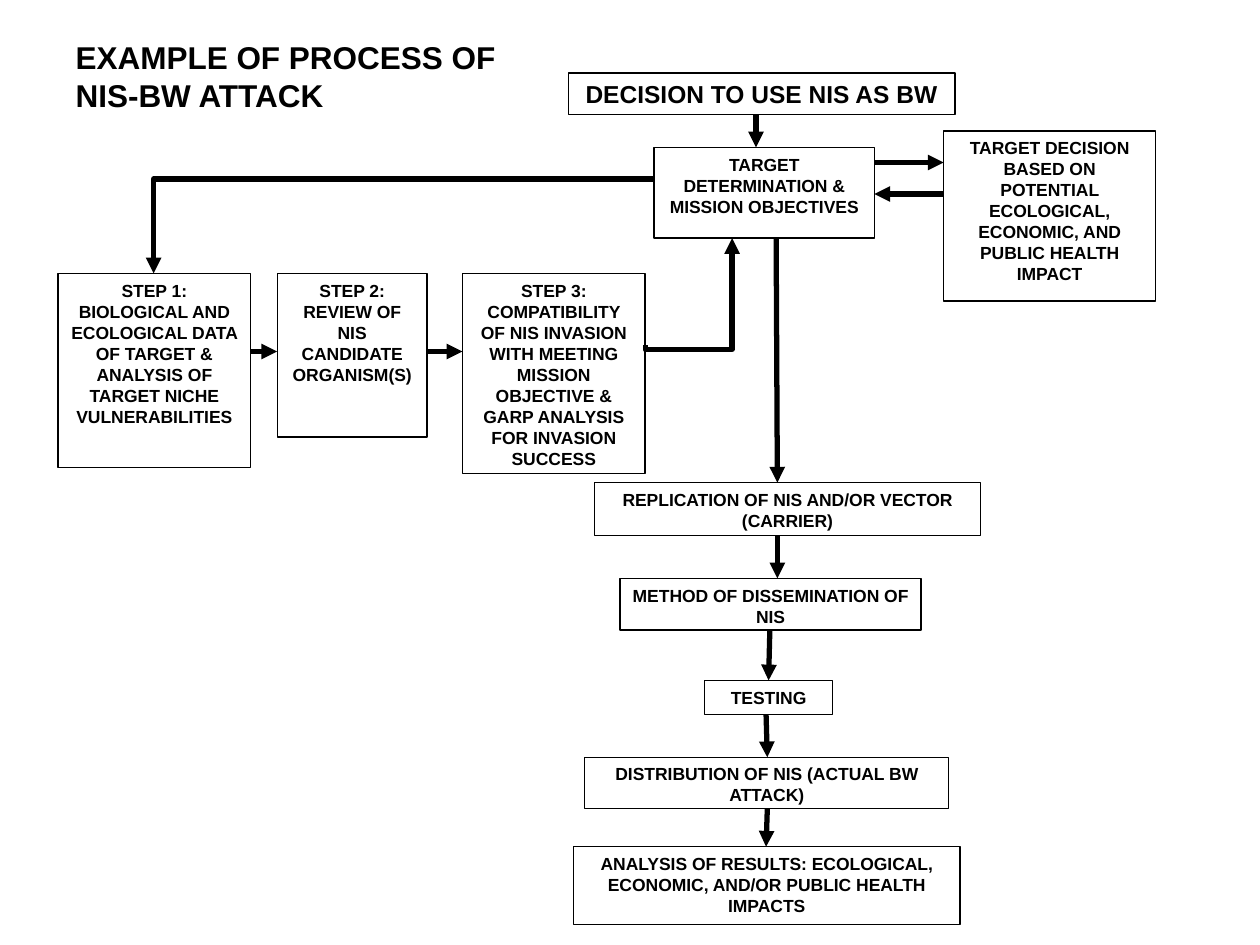
from lxml import etree
from pptx import Presentation
from pptx.dml.color import RGBColor
from pptx.enum.shapes import MSO_CONNECTOR, MSO_SHAPE
from pptx.enum.text import MSO_ANCHOR, MSO_AUTO_SIZE, PP_ALIGN
from pptx.oxml.ns import qn
from pptx.util import Inches, Pt

RECTANGLE = MSO_SHAPE.RECTANGLE
STRAIGHT, ELBOW = MSO_CONNECTOR.STRAIGHT, MSO_CONNECTOR.ELBOW
LEFT, CENTER = PP_ALIGN.LEFT, PP_ALIGN.CENTER
TOP, FIXED_SIZE = MSO_ANCHOR.TOP, MSO_AUTO_SIZE.NONE

COLORS = {"paper": "FFFFFF", "ink": "000000"}
COLUMNS, ROWS = 100, 75
TITLE_ONLY = 5

# name: (column, row, columns wide, rows high, text, text size)
BOXES = {
    "decision": (45.1, 5.8, 30.7, 3.3, "DECISION TO USE NIS AS BW", 14),
    "target": (51.9, 11.7, 17.5, 7.2, "TARGET DETERMINATION & MISSION OBJECTIVES", 10),
    "step 1": (4.6, 21.7, 15.3, 15.4, "STEP 1: BIOLOGICAL AND ECOLOGICAL DATA OF TARGET & "
               "ANALYSIS OF TARGET NICHE VULNERABILITIES", 10),
    "step 2": (22, 21.7, 11.9, 13, "STEP 2: REVIEW OF NIS CANDIDATE ORGANISM(S)", 10),
    "step 3": (36.7, 21.7, 14.5, 15.9, "STEP 3: COMPATIBILITY OF NIS INVASION WITH MEETING "
               "MISSION OBJECTIVE & GARP ANALYSIS FOR INVASION SUCCESS", 10),
    "replication": (47.2, 38.3, 30.6, 4.2, "REPLICATION OF NIS AND/OR VECTOR (CARRIER)", 10),
    "method": (49.2, 45.9, 23.9, 4.1, "METHOD OF DISSEMINATION OF NIS", 10),
    "testing": (55.9, 54, 10.2, 2.7, "TESTING", 10),
    "distribution": (46.4, 60.1, 28.9, 4.1, "DISTRIBUTION OF NIS (ACTUAL BW ATTACK)", 10),
    "impact": (74.9, 10.4, 16.8, 13.5, "TARGET DECISION BASED ON POTENTIAL ECOLOGICAL, "
               "ECONOMIC, AND PUBLIC HEALTH IMPACT", 10),
    "analysis": (45.5, 67.2, 30.7, 6.2, "ANALYSIS OF RESULTS: ECOLOGICAL, ECONOMIC, "
                 "AND/OR PUBLIC HEALTH IMPACTS", 10),
}

# (upper box, lower box, start column, end column)
DOWN_ARROWS = [
    ("decision", "target", 60, 60),
    ("target", "replication", 61.6, 61.7),
    ("replication", "method", 61.7, 61.7),
    ("method", "testing", 61.1, 61),
    ("testing", "distribution", 60.8, 60.9),
    ("distribution", "analysis", 60.9, 60.8),
]

# (from box, to box, row)
SIDE_ARROWS = [
    ("target", "impact", 12.9),
    ("impact", "target", 15.4),
    ("step 1", "step 2", 27.9),
    ("step 2", "step 3", 27.9),
]


class FlowChart:
    """Holds the style and the current slide."""

    font = {"name": "Arial", "bold": True}
    frame = {"word_wrap": True, "auto_size": FIXED_SIZE, "vertical_anchor": TOP}

    def __init__(self, presentation):
        self.width = presentation.slide_width
        self.height = presentation.slide_height
        self.slide = presentation.slides.add_slide(presentation.slide_layouts[TITLE_ONLY])

    def x(self, columns):
        return round(self.width * columns / COLUMNS)

    def y(self, rows):
        return round(self.height * rows / ROWS)

    def add_text(self, shape, text, size, alignment, space_after):
        for name, value in self.frame.items():
            setattr(shape.text_frame, name, value)
        paragraph = shape.text_frame.paragraphs[0]
        paragraph.alignment = alignment
        paragraph.space_after = Pt(space_after)
        run = paragraph.add_run()
        run.text = text
        for name, value in {**self.font, "size": Pt(size)}.items():
            setattr(run.font, name, value)
        run.font.color.rgb = RGBColor.from_string(COLORS["ink"])

    def title(self, column, row, wide, high, text):
        shape = self.slide.shapes.title
        place = {"left": self.x(column), "top": self.y(row),
                 "width": self.x(wide), "height": self.y(high)}
        for name, value in place.items():
            setattr(shape, name, value)
        self.add_text(shape, text, 18, LEFT, 0)

    def box(self, column, row, wide, high, text, size):
        shape = self.slide.shapes.add_shape(
            RECTANGLE, self.x(column), self.y(row), self.x(wide), self.y(high))
        shape.shadow.inherit = False
        shape.fill.solid()
        shape.fill.fore_color.rgb = RGBColor.from_string(COLORS["paper"])
        shape.line.color.rgb = RGBColor.from_string(COLORS["ink"])
        shape.line.width = Pt(0.75)
        self.add_text(shape, text, size, CENTER, 10)

    def arrow(self, begin, end, kind=STRAIGHT):
        connector = self.slide.shapes.add_connector(
            kind, self.x(begin[0]), self.y(begin[1]), self.x(end[0]), self.y(end[1]))
        connector.line.color.rgb = RGBColor.from_string(COLORS["ink"])
        connector.line.width = Pt(3)
        properties = connector._element.spPr
        etree.SubElement(properties.find(qn("a:ln")), qn("a:tailEnd"), type="triangle")
        etree.SubElement(properties, qn("a:effectLst"))
        return connector

    def elbow(self, begin, end, bend, upward=False):
        """Bend is the share of the way at which the line turns."""
        if upward:  # a quarter turn swaps the sides around the same centre
            middle_x, middle_y = (begin[0] + end[0]) / 2, (begin[1] + end[1]) / 2
            half_wide, half_high = abs(end[1] - begin[1]) / 2, abs(end[0] - begin[0]) / 2
            begin = (middle_x - half_wide, middle_y - half_high)
            end = (middle_x + half_wide, middle_y + half_high)
        properties = self.arrow(begin, end, ELBOW)._element.spPr
        if upward:
            properties.find(qn("a:xfrm")).set("rot", str(270 * 60000))
        guides = properties.find(qn("a:prstGeom")).get_or_add_avLst()
        etree.SubElement(guides, qn("a:gd"), name="adj1", fmla=f"val {round(bend * 100000)}")


def main():
    presentation = Presentation()
    presentation.slide_width, presentation.slide_height = Inches(10), Inches(7.5)
    chart = FlowChart(presentation)

    # Title and boxes
    chart.title(5, 2.5, 37.5, 7.1, "EXAMPLE OF PROCESS OF NIS-BW ATTACK")
    for box in BOXES.values():
        chart.box(*box)

    # Main flow, from the bottom of one box to the top of the next
    for upper, lower, start, finish in DOWN_ARROWS:
        bottom = BOXES[upper][1] + BOXES[upper][3]
        chart.arrow((start, bottom), (finish, BOXES[lower][1]))

    # Links between neighbouring boxes
    for source, goal, row in SIDE_ARROWS:
        source_left, goal_left = BOXES[source][0], BOXES[goal][0]
        if source_left < goal_left:
            start, finish = source_left + BOXES[source][2], goal_left
        else:
            start, finish = source_left, goal_left + BOXES[goal][2]
        chart.arrow((start, row), (finish, row))

    # Loop from the target through the three steps and back
    chart.elbow((51.9, 14.2), (12.2, 21.7), 1)
    chart.elbow((51.2, 27.4), (58.1, 18.9), -0.04, upward=True)

    presentation.save("out.pptx")


if __name__ == "__main__":
    main()
